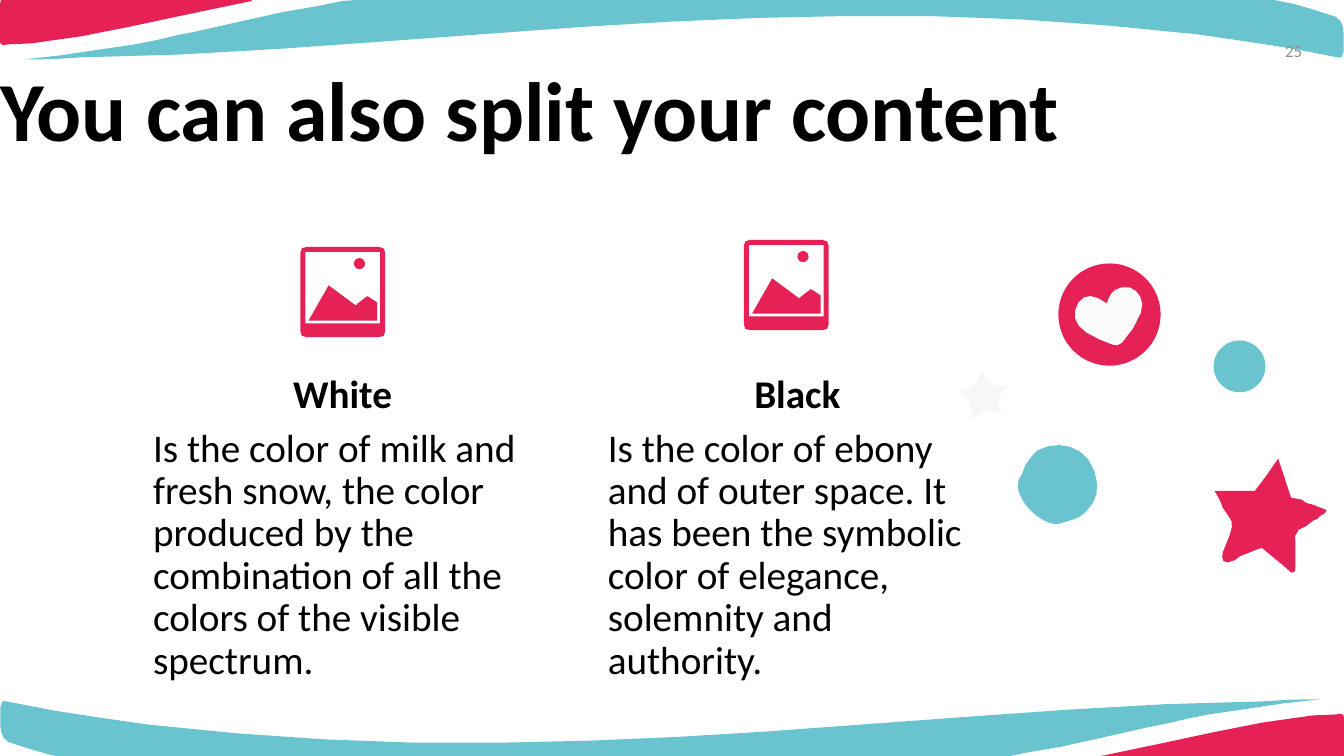
from dataclasses import dataclass
from math import ceil, hypot, sqrt

from pptx import Presentation
from pptx.dml.color import RGBColor
from pptx.enum.shapes import MSO_SHAPE as Preset
from pptx.enum.text import MSO_ANCHOR as Anchor, PP_ALIGN as Align
from pptx.util import Pt


@dataclass(frozen=True)
class Theme:
    font: str = "Calibri"
    teal: str = "6AC4D0"
    red: str = "E62155"
    pale_star: str = "F8F7F7"
    heart: str = "FBFBFB"
    text: str = "000000"
    number: str = "8C8C8C"
    title_size: float = 60
    body_size: float = 28
    number_size: float = 12


THEME = Theme()
WIDTH, HEIGHT = 960, 540
BLEED = 2
TOLERANCE = 0.5

BAND = [
    (955.4, 41),
    (923, 33.8, 888.5, 29.5, 854.6, 24.5), (771.1, 15.1, 687.6, 10.1, 604.1, 11.5),
    (540, 12.2, 478.1, 15.1, 414, 19.4), (266.4, 30.2),
    (196.6, 35.3, 128.2, 40.3, 58.3, 41), (44.6, 42.5, 29.5, 42.5, 16.6, 42.5),
    (44.6, 40.3, 69.8, 35.3, 96.5, 31.7), (111.6, 29.5, 126.7, 24.5, 141.1, 22.3),
    (160.6, 17.3, 181.4, 13.7, 202.3, 8.6), (227.5, 4.3),
    (244.1, -0.7, 262.1, -0.7, 277.9, -0.7), (897.8, -0.7),
    (916.6, -0.7, 931.7, 5, 948.2, 10.1), (959.8, 12.2, 959.8, 19.4, 959.8, 28.1),
    (959.8, 36.7), (958.3, 38.9, 959.8, 42.5, 955.4, 41),
]
CORNER = [
    (180, 0.7),
    (128.2, 11.5), (93.6, 18.7, 58.3, 27.4, 22.3, 31),
    (5.8, 31.7), (1.4, 33.1, 0, 31.7, 0, 29.5), (0, 2.9),
    (0, -2.2, 4.3, -0.7, 7.2, -0.7), (178.6, -0.7),
]
FRAME = [
    (0, 4), (0, 1.4, 1.4, 0, 4.3, 0), (56.2, 0), (59, 0, 60.5, 1.4, 60.5, 4),
    (60.5, 60.5), (60.5, 63.4, 59, 64.4, 56.2, 64.4), (4.3, 64.4),
    (1.4, 64.4, 0, 63.4, 0, 60.5),
]
FRAME_OPENING = [(3.6, 54.7), (56.9, 54.7), (56.9, 3.6), (3.6, 3.6)]
HILLS = [
    (5.8, 52.6), (20.2, 27.4), (39.6, 41.8), (41, 40.3), (47.5, 35.3),
    (48.2, 35.3), (54.7, 39.6), (54.7, 52.6),
]
STAR = [
    (922.3, 409),
    (916.6, 403.9), (904.3, 393.8),
    (902.2, 390.2, 899.3, 391.7, 896.4, 393.1), (885.6, 397.4),
    (884.2, 399.6, 880.6, 401, 877, 401.8), (872.6, 401.8, 872.6, 398.2, 873.4, 394.6),
    (877, 385.9), (879.1, 379.4, 882.7, 373.7, 877, 367.9),
    (874.8, 364.3, 871.9, 361.4, 871.2, 357.1), (867.6, 350.6),
    (885.6, 350.6), (896.4, 350.6),
    (902.2, 343.4, 907.2, 336.2, 913, 327.6), (922.3, 355.7),
    (925.9, 356.4, 930.2, 355.7, 933.1, 359.3), (938.2, 360.7),
    (947.5, 364.3), (947.5, 367.9, 942.5, 367.2, 941, 370.8),
    (938.2, 370.8, 936, 373.7, 933.1, 375.8), (926.6, 377.3, 923.8, 381.6, 925.2, 388.8),
    (925.2, 405.4), (925.2, 407.5, 925.2, 409, 922.3, 409),
]
PEBBLE = [
    (730.1, 338.4),
    (731.5, 331.9, 735.8, 326.9, 740.9, 321.8), (755.3, 313.9, 775.4, 317.5, 781.9, 337),
    (785.5, 348.5, 784.1, 357.8, 775.4, 365.8), (772.6, 368.6, 769, 370.8, 765.4, 371.5),
    (755.3, 374.4), (752.4, 374.4, 749.5, 373.7, 746.6, 372.2),
    (743, 370.1, 738.7, 367.9, 735.8, 364.3), (732.2, 361.4, 730.1, 356.4, 727.9, 352.1),
    (726.5, 347, 726.5, 342.7, 730.1, 338.4),
]
PALE_STAR = [
    (694.1, 300.2),
    (693.4, 286.6, 693.4, 286.6, 684.7, 278.6), (694.8, 278.6, 699.8, 274.3, 700.6, 264.2),
    (704.9, 272.2, 709.2, 278.6, 720, 275), (713.5, 281.5, 711.4, 288.7, 715.7, 297.4),
    (707, 290.2, 700.6, 293.8, 694.1, 300.2),
]
HEART = [
    (790.6, 216.7),
    (792, 211.7, 794.2, 206.6, 801.4, 205.2), (810.7, 203, 818.6, 213.1, 815, 223.2),
    (812.2, 231.1, 807.1, 238.3, 801.4, 244.8), (799.2, 247, 797, 247, 794.9, 246.2),
    (788.4, 244.1, 781.9, 241.2, 776.2, 237.6), (766.8, 231.8, 765.4, 223.2, 770.4, 216),
    (775.4, 209.5, 781.2, 210.2, 790.6, 216.7),
]


def bezier(t, start, ctrl1, ctrl2, end):
    u = 1 - t
    return u**3 * start + 3 * u * u * t * ctrl1 + 3 * u * t * t * ctrl2 + t**3 * end


def flatten(xs, ys):
    bend = max(
        hypot(xs[i] - 2 * xs[i + 1] + xs[i + 2], ys[i] - 2 * ys[i + 1] + ys[i + 2])
        for i in range(2)
    )
    count = max(1, ceil(sqrt(0.75 * bend / TOLERANCE)))
    return [(bezier(i / count, *xs), bezier(i / count, *ys)) for i in range(1, count + 1)]


def trace(outline, left, top):
    points = [outline[0]]
    for step in outline[1:]:
        if len(step) == 2:
            points.append(step)
        else:
            x, y = points[-1]
            points += flatten((x, *step[0::2]), (y, *step[1::2]))
    return [(Pt(left + x), Pt(top + y)) for x, y in points]


def paint(shape, color):
    shape.shadow.inherit = False
    shape.fill.solid()
    shape.fill.fore_color.rgb = RGBColor.from_string(color)
    shape.line.fill.background()
    return shape


def add_outline(slide, color, *outlines, left=0, top=0):
    first, *others = [trace(outline, left, top) for outline in outlines]
    builder = slide.shapes.build_freeform(*first[0])
    builder.add_line_segments(first[1:])
    for points in others:
        builder.move_to(*points[0])
        builder.add_line_segments(points[1:])
    return paint(builder.convert_to_shape(), color)


def add_dot(slide, color, left, top, size):
    paint(slide.shapes.add_shape(Preset.OVAL, Pt(left), Pt(top), Pt(size), Pt(size)), color)


def add_waves(slide):
    for outline, color in ((BAND, THEME.teal), (CORNER, THEME.red)):
        add_outline(slide, color, outline)
        footer = add_outline(slide, color, outline)
        footer.left = Pt(WIDTH) - footer.left - footer.width
        footer.top = Pt(HEIGHT + BLEED) - footer.top - footer.height
        footer.rotation = 180


def add_photo_icon(slide, left, top):
    add_outline(slide, THEME.red, FRAME, FRAME_OPENING, left=left, top=top)
    add_outline(slide, THEME.red, HILLS, left=left, top=top)
    add_dot(slide, THEME.red, left + 38.2, top + 7.9, 8)


def add_text_area(slide, left, top, width, height, anchor=Anchor.TOP):
    frame = slide.shapes.add_textbox(Pt(left), Pt(top), Pt(width), Pt(height)).text_frame
    frame.word_wrap = True
    frame.vertical_anchor = anchor
    frame.margin_left = frame.margin_right = frame.margin_top = frame.margin_bottom = 0
    return frame


def write(paragraph, text, size, color=THEME.text, bold=False, align=Align.LEFT, spacing=0.9):
    paragraph.alignment = align
    paragraph.line_spacing = spacing
    run = paragraph.add_run()
    run.text = text
    run.font.name = THEME.font
    run.font.size = Pt(size)
    run.font.bold = bold
    run.font.color.rgb = RGBColor.from_string(color)


def add_column(slide, left, height, heading, description):
    frame = add_text_area(slide, left, 267.8, 270.7, height)
    write(frame.paragraphs[0], heading, THEME.body_size, bold=True, align=Align.CENTER)
    body = frame.add_paragraph()
    body.space_before = body.space_after = Pt(8)
    write(body, description, THEME.body_size)


def add_decorations(slide):
    add_dot(slide, THEME.red, 756, 188.2, 73)
    add_outline(slide, THEME.red, STAR)
    add_outline(slide, THEME.teal, PEBBLE)
    add_dot(slide, THEME.teal, 866.9, 243.2, 37)
    add_outline(slide, THEME.pale_star, PALE_STAR)
    add_outline(slide, THEME.heart, HEART)


def main():
    deck = Presentation()
    deck.slide_width, deck.slide_height = Pt(WIDTH), Pt(HEIGHT)
    slide = deck.slides.add_slide(deck.slide_layouts[6])
    add_waves(slide)
    title = add_text_area(slide, 0, 49, 816, 65.5, Anchor.MIDDLE)
    write(title.paragraphs[0], "You can also split your content", THEME.title_size, bold=True)
    add_column(slide, 109.4, 160, "White",
               "Is the color of milk and fresh snow, the color produced by the "
               "combination of all the colors of the visible spectrum.")
    add_column(slide, 434.2, 139, "Black",
               "Is the color of ebony and of outer space. It has been the symbolic "
               "color of elegance, solemnity and authority.")
    number = add_text_area(slide, 888, 0, 72, 72, Anchor.MIDDLE)
    write(number.paragraphs[0], "25", THEME.number_size, THEME.number,
          align=Align.CENTER, spacing=1.0)
    add_photo_icon(slide, 531.4, 171.4)
    add_photo_icon(slide, 214.6, 176.4)
    add_decorations(slide)
    deck.save("out.pptx")


if __name__ == "__main__":
    main()
